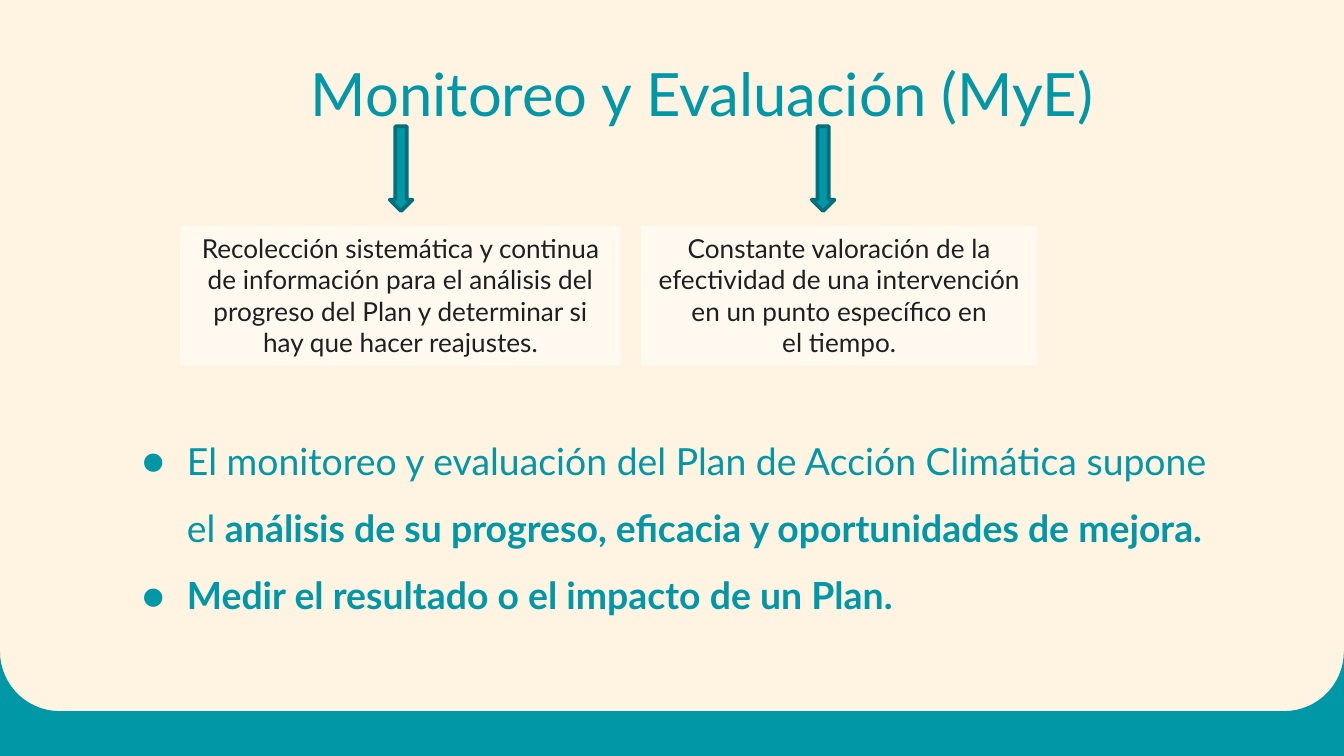
import math

from lxml import etree
from pptx import Presentation
from pptx.dml.color import RGBColor
from pptx.enum.shapes import MSO_SHAPE
from pptx.enum.text import MSO_ANCHOR, MSO_AUTO_SIZE, PP_ALIGN
from pptx.oxml.ns import qn
from pptx.util import Pt

RECTANGLE, DOWN_ARROW = MSO_SHAPE.RECTANGLE, MSO_SHAPE.DOWN_ARROW
TOP = MSO_ANCHOR.TOP
FIXED, GROW = MSO_AUTO_SIZE.NONE, MSO_AUTO_SIZE.SHAPE_TO_FIT_TEXT
LEFT, CENTER = PP_ALIGN.LEFT, PP_ALIGN.CENTER

WIDTH, HEIGHT = 720, 405
TEAL, DARK_TEAL, CREAM = "0097A7", "00707C", "FFF3E2"
WHITE, INK = "FFFFFF", "1F1F1F"


def color(hex_text):
    return RGBColor.from_string(hex_text)


class SlidePainter:
    """Holds the style and the slide being built."""

    font = "Lato"

    def __init__(self, page):
        self.page = page

    def background(self, fill):
        self.page.background.fill.solid()
        self.page.background.fill.fore_color.rgb = color(fill)

    def place(self, box, left, top, width, height):
        box.left, box.top = Pt(left), Pt(top)
        box.width, box.height = Pt(width), Pt(height)

    def add_text(self, box, paragraphs, size, ink, align, inset, fit=FIXED, spacing=1.0):
        """Each paragraph is a list of (text, bold) runs."""
        frame = box.text_frame
        frame.word_wrap, frame.auto_size = True, fit
        frame.vertical_anchor = TOP
        frame.margin_left = frame.margin_right = Pt(7.2)
        frame.margin_top = frame.margin_bottom = Pt(inset)
        for index, runs in enumerate(paragraphs):
            para = frame.add_paragraph() if index else frame.paragraphs[0]
            para.alignment, para.line_spacing = align, spacing
            para.space_before = para.space_after = Pt(0)
            for text, bold in runs:
                span = para.add_run()
                span.text = text
                span.font.name, span.font.size = self.font, Pt(size)
                span.font.bold = bold
                span.font.color.rgb = color(ink)

    def title(self, text, *area):
        box = self.page.shapes.title
        self.place(box, *area)
        self.add_text(box, [[(text, False)]], 32, TEAL, CENTER, 7.2)

    def bullets(self, paragraphs, *area):
        box = self.page.placeholders[1]
        self.place(box, *area)
        self.add_text(box, paragraphs, 20, TEAL, LEFT, 7.2, spacing=1.5)
        for para in box.text_frame.paragraphs:
            props = para._p.get_or_add_pPr()
            props.set("marL", str(Pt(36)))
            props.set("indent", str(-Pt(24)))
            tint = etree.SubElement(props, qn("a:buClr"))
            etree.SubElement(tint, qn("a:srgbClr"), val=TEAL)
            etree.SubElement(props, qn("a:buFont"), typeface=self.font)
            etree.SubElement(props, qn("a:buChar"), char="●")

    def paint(self, shape, fill, line=None):
        shape.shadow.inherit = False
        shape.fill.solid()
        shape.fill.fore_color.rgb = color(fill)
        if line:
            shape.line.color.rgb = color(line)
            shape.line.width = Pt(2)
        else:
            shape.line.fill.background()

    def shape(self, kind, area, fill, line=None):
        shape = self.page.shapes.add_shape(kind, *map(Pt, area))
        self.paint(shape, fill, line)
        return shape

    def arrow(self, *area):
        self.shape(DOWN_ARROW, area, TEAL, DARK_TEAL)

    def card(self, lines, *area):
        card = self.shape(RECTANGLE, area, WHITE)
        tint = card._element.spPr.find(".//" + qn("a:srgbClr"))
        etree.SubElement(tint, qn("a:alpha"), val="50000")
        self.add_text(card, [[(line, False)] for line in lines], 14, INK, CENTER, 3.6, GROW)

    def footer(self, floor, radius):
        """Band along the bottom whose upper edge rises in two round corners."""
        points = [(0, HEIGHT)]
        for center, start in ((radius, 180), (WIDTH - radius, 90)):
            for step in range(0, 91, 6):
                angle = math.radians(start - step)
                points.append((center + radius * math.cos(angle),
                               floor - radius + radius * math.sin(angle)))
        points.append((WIDTH, HEIGHT))
        corners = [(Pt(x), Pt(y)) for x, y in points]
        builder = self.page.shapes.build_freeform(*corners[0], scale=1.0)
        builder.add_line_segments(corners[1:], close=True)
        self.paint(builder.convert_to_shape(), TEAL)


def main():
    deck = Presentation()
    deck.slide_width, deck.slide_height = Pt(WIDTH), Pt(HEIGHT)
    painter = SlidePainter(deck.slides.add_slide(deck.slide_layouts[1]))

    # Backdrop
    painter.background(CREAM)
    painter.footer(381, 32)

    # Title and main points
    painter.title("Monitoreo y Evaluación (MyE)", 50.4, 23, 651.6, 45.4)
    painter.bullets([
        [("El monitoreo y evaluación del Plan de Acción Climática supone el ", False),
         ("análisis de su progreso, eficacia y oportunidades de mejora.", True)],
        [("Medir el resultado o el impacto de un Plan.", True)],
    ], 56.9, 215.3, 607, 152.6)

    # Definitions of the two terms, each under its arrow
    definitions = [
        (96.5, 236.2, 208.8,
         ["Recolección sistemática y continua de información para el análisis "
          "del progreso del Plan y determinar si hay que hacer reajustes."]),
        (343.4, 212.4, 434.9,
         ["Constante valoración de la",
          "efectividad de una intervención en un punto específico en",
          "el tiempo."]),
    ]
    for left, width, arrow_left, lines in definitions:
        painter.card(lines, left, 121, width, 74.9)
        painter.arrow(arrow_left, 67.7, 12.2, 45.4)

    deck.save("out.pptx")


if __name__ == "__main__":
    main()
